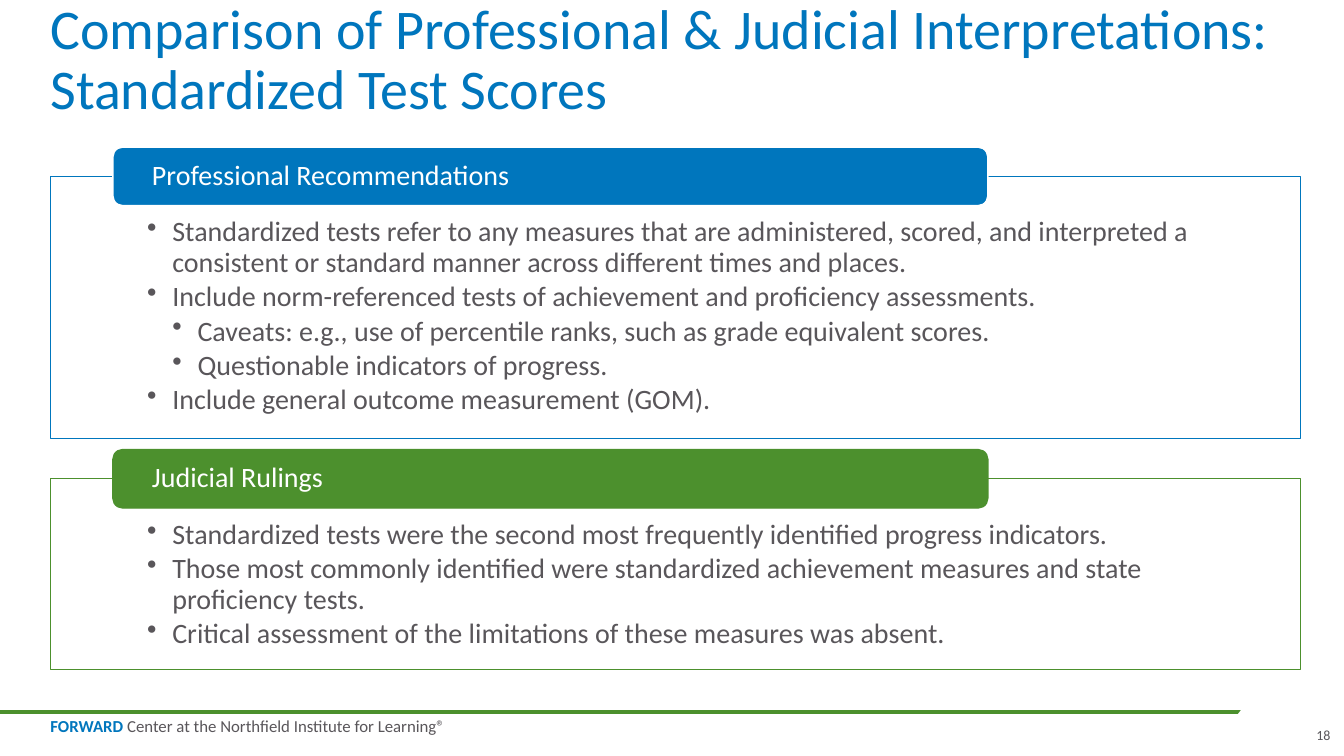
from lxml import etree
from pptx import Presentation
from pptx.dml.color import RGBColor
from pptx.enum.shapes import MSO_CONNECTOR, MSO_SHAPE
from pptx.enum.text import MSO_ANCHOR, PP_ALIGN
from pptx.oxml.ns import qn
from pptx.util import Pt

TOP, MIDDLE, BOTTOM = MSO_ANCHOR.TOP, MSO_ANCHOR.MIDDLE, MSO_ANCHOR.BOTTOM
LEFT, RIGHT = PP_ALIGN.LEFT, PP_ALIGN.RIGHT
FONT = "Calibri"
COLORS = {"blue": "0076BD", "green": "4C902D", "gray": "59565A", "white": "FFFFFF"}

TITLE = "Comparison of Professional & Judicial Interpretations: Standardized Test Scores"
FOOTER = [("FORWARD", "blue", True),
          (" Center at the Northfield Institute for Learning®", "gray", False)]
PAGE_NUMBER = "18"

# Each bullet is (level, text)
SECTIONS = [
    {"heading": "Professional Recommendations", "color": "blue", "tab_line": "white",
     "top": 126, "height": 187.2,
     "bullets": [
         (1, "Standardized tests refer to any measures that are administered, scored, and "
             "interpreted a consistent or standard manner across different times and places."),
         (1, "Include norm-referenced tests of achievement and proficiency assessments."),
         (2, "Caveats: e.g., use of percentile ranks, such as grade equivalent scores."),
         (2, "Questionable indicators of progress."),
         (1, "Include general outcome measurement (GOM)."),
     ]},
    {"heading": "Judicial Rulings", "color": "green", "tab_line": "green",
     "top": 342, "height": 136.08,
     "bullets": [
         (1, "Standardized tests were the second most frequently identified progress indicators."),
         (1, "Those most commonly identified were standardized achievement measures and state "
             "proficiency tests."),
         (1, "Critical assessment of the limitations of these measures was absent."),
     ]},
]

SLIDE_W, SLIDE_H = 960, 540
MARGIN, CONTENT_W = 36, 892.8
TAB_LEFT, TAB_W, TAB_H, TAB_RISE = 80.64, 624.96, 41.76, 20.88
BULLET_INDENT = 18
FOOTER_LINE_Y = 508.32


def rgb(color):
    return RGBColor.from_string(COLORS[color])


def set_frame(shape, anchor=TOP, insets=(0, 0, 0, 0), wrap=True):
    frame = shape.text_frame
    frame.word_wrap = wrap
    frame.vertical_anchor = anchor
    (frame.margin_left, frame.margin_top,
     frame.margin_right, frame.margin_bottom) = map(Pt, insets)
    return frame


def set_font(font, size, color, bold=False):
    font.name, font.size, font.bold = FONT, Pt(size), bold
    font.color.rgb = rgb(color)


def write(paragraph, text, size, color, spacing=0.9, align=LEFT):
    paragraph.text = text
    paragraph.alignment = align
    paragraph.line_spacing = spacing
    set_font(paragraph.runs[0].font, size, color)


def add_bullet(paragraph, level):
    properties = paragraph._p.get_or_add_pPr()
    properties.set("marL", str(Pt(BULLET_INDENT * level)))
    properties.set("indent", str(-Pt(BULLET_INDENT)))
    etree.SubElement(properties, qn("a:buChar")).set("char", "•")


def add_text_box(slide, left, top, width, height, **frame_options):
    box = slide.shapes.add_textbox(Pt(left), Pt(top), Pt(width), Pt(height))
    return set_frame(box, **frame_options)


def add_filled(slide, kind, left, top, width, height, fill, line=None):
    shape = slide.shapes.add_shape(kind, Pt(left), Pt(top), Pt(width), Pt(height))
    shape.shadow.inherit = False
    shape.fill.solid()
    shape.fill.fore_color.rgb = rgb(fill)
    if line:
        shape.line.color.rgb = rgb(line)
        shape.line.width = Pt(1)
    else:
        shape.line.fill.background()
    return shape


def add_section(slide, section):
    panel = add_filled(slide, MSO_SHAPE.RECTANGLE, MARGIN, section["top"], CONTENT_W,
                       section["height"], "white", section["color"])
    frame = set_frame(panel, insets=(69.12, 29.52, 69.12, 11.52))
    for index, (level, text) in enumerate(section["bullets"]):
        paragraph = frame.add_paragraph() if index else frame.paragraphs[0]
        paragraph.level = level
        add_bullet(paragraph, level)
        write(paragraph, text, 20, "gray")
        paragraph.space_after = Pt(3)

    tab = add_filled(slide, MSO_SHAPE.ROUNDED_RECTANGLE, TAB_LEFT, section["top"] - TAB_RISE,
                     TAB_W, TAB_H, section["color"], section["tab_line"])
    heading = set_frame(tab, MIDDLE, (25.92, 0, 25.92, 0))
    write(heading.paragraphs[0], section["heading"], 20, "white")


def add_footer(slide):
    rule = slide.shapes.add_connector(MSO_CONNECTOR.STRAIGHT, 0, Pt(FOOTER_LINE_Y),
                                      Pt(936), Pt(FOOTER_LINE_Y))
    rule.line.color.rgb = rgb("green")
    rule.line.width = Pt(3)
    etree.SubElement(rule._element.spPr, qn("a:effectLst"))

    rule_end = add_filled(slide, MSO_SHAPE.OVAL, 875.52, 487.44, 85.68, 41.76, "white")
    rule_end.rotation = 332.1

    credit = add_text_box(slide, MARGIN, 513.36, 289.44, 12.24, wrap=False).paragraphs[0]
    credit.line_spacing = 0.85
    for text, color, bold in FOOTER:
        run = credit.add_run()
        run.text = text
        set_font(run.font, 12, color, bold)

    number = add_text_box(slide, 938.16, 518.4, 12.24, 12.24, anchor=BOTTOM, wrap=False)
    write(number.paragraphs[0], PAGE_NUMBER, 10, "gray", 1.0, RIGHT)


def main():
    deck = Presentation()
    deck.slide_width, deck.slide_height = Pt(SLIDE_W), Pt(SLIDE_H)
    slide = deck.slides.add_slide(deck.slide_layouts[6])
    add_footer(slide)
    title = add_text_box(slide, MARGIN, 0, CONTENT_W, 87.12, anchor=BOTTOM)
    write(title.paragraphs[0], TITLE, 40, "blue")
    for section in SECTIONS:
        add_section(slide, section)
    deck.save("out.pptx")


if __name__ == "__main__":
    main()
